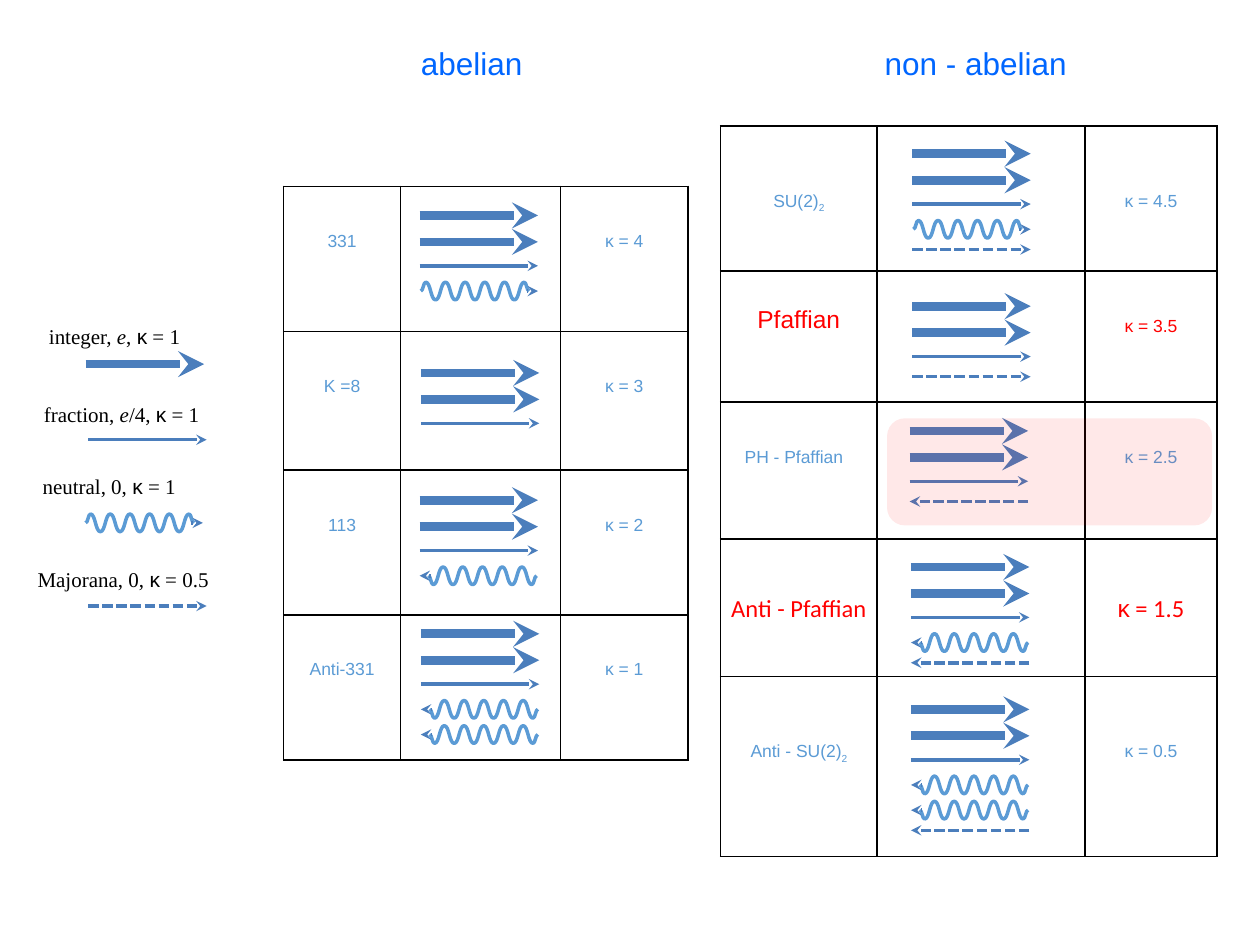
from dataclasses import dataclass

from lxml.etree import SubElement
from pptx import Presentation
from pptx.dml.color import RGBColor
from pptx.enum.dml import MSO_LINE
from pptx.enum.shapes import MSO_CONNECTOR, MSO_SHAPE
from pptx.enum.text import MSO_ANCHOR, MSO_AUTO_SIZE, PP_ALIGN
from pptx.oxml.ns import qn
from pptx.util import Inches, Pt


@dataclass(frozen=True)
class Theme:
    heading: str = "0066FF"
    label: str = "5B9BD5"
    arrow: str = "4B7EBC"
    accent: str = "FF0000"
    ink: str = "000000"
    sans: str = "Arial"
    serif: str = "Times New Roman"
    alt: str = "Calibri"
    heading_size: int = 18
    accent_size: int = 14
    legend_size: int = 12
    cell_size: int = 10


T = Theme()


def write(p, text, font=T.sans, size=T.cell_size, color=T.label, italic=False, base=0):
    r = p.add_run()
    r.text = text
    r.font.name = font
    r.font.size = Pt(size)
    r.font.bold = False
    r.font.italic = italic
    r.font.color.rgb = RGBColor.from_string(color)
    if base:
        r._r.get_or_add_rPr().set("baseline", str(base * 1000))


def add_arrow(shapes, x1, x2, y, width, dashed=False):
    c = shapes.add_connector(MSO_CONNECTOR.STRAIGHT, Inches(x1), Inches(y), Inches(x2), Inches(y))
    c.line.color.rgb = RGBColor.from_string(T.arrow)
    c.line.width = Pt(width)
    if dashed:
        c.line.dash_style = MSO_LINE.SQUARE_DOT
    SubElement(c.line._get_or_add_ln(), qn("a:tailEnd"), type="stealth")
    SubElement(c._element.spPr, qn("a:effectLst"))


prs = Presentation()
prs.slide_width = Inches(10)
prs.slide_height = Inches(7.5)
s = prs.slides.add_slide(prs.slide_layouts.get_by_name("Comparison"))

headings = {1: ("abelian", 3.24, 1.02), 3: ("non - abelian", 6.92, 1.66)}
for ph in list(s.placeholders):
    idx = ph.placeholder_format.idx
    if idx not in headings:
        ph._element.getparent().remove(ph._element)
        continue
    text, left, width = headings[idx]
    ph.left, ph.top, ph.width, ph.height = Inches(left), Inches(0.3), Inches(width), Inches(0.4)
    tf = ph.text_frame
    tf.word_wrap = False
    tf.auto_size = MSO_AUTO_SIZE.NONE
    tf.vertical_anchor = MSO_ANCHOR.TOP
    p = tf.paragraphs[0]
    p.space_before = Pt(0)
    write(p, text, size=T.heading_size, color=T.heading)

SUB = ("2", {"base": -25})
RED = {"color": T.accent}
BIG = {"color": T.accent, "size": T.accent_size}
BIG_ALT = {**BIG, "font": T.alt}
LINE2, LINE3 = 0.36, 0.52

tables = [
    (2.25, 1.48, [0.93, 1.27, 1.01], [
        (1.15, [("331", {})], LINE2, [("κ = 4", {})], LINE2),
        (1.1, [("K =8", {})], LINE2, [("κ = 3", {})], LINE2),
        (1.15, [("113", {})], LINE2, [("κ = 2", {})], LINE2),
        (1.15, [("Anti-331", {})], LINE2, [("κ = 1", {})], LINE2),
    ]),
    (5.72, 1, [1.24, 1.65, 1.05], [
        (1.15, [("SU(2)", {}), SUB], LINE3, [("κ = 4.5", {})], LINE3),
        (1.04, [("Pfaffian", BIG)], 0.28, [("κ = 3.5", RED)], LINE2),
        (1.09, [("PH - Pfaffian", {})], LINE2, [("κ = 2.5", {})], LINE2),
        (1.09, [("Anti - Pfaffian", BIG_ALT)], 0.44, [("κ", BIG), (" = 1.5", BIG_ALT)], 0.44),
        (1.43, [("Anti - SU(2)", {}), SUB], LINE3, [("κ = 0.5", {})], LINE3),
    ]),
]

for left, top, widths, rows in tables:
    height = sum(row[0] for row in rows)
    tbl = s.shapes.add_table(len(rows), len(widths), Inches(left), Inches(top),
                             Inches(sum(widths)), Inches(height)).table
    tbl.first_row = False
    tbl.horz_banding = False
    for col, width in zip(tbl.columns, widths):
        col.width = Inches(width)
    for i, (row_height, name, name_top, kappa, kappa_top) in enumerate(rows):
        tbl.rows[i].height = Inches(row_height)
        for j, (runs, margin) in enumerate([(name, name_top), ([], 0.04), (kappa, kappa_top)]):
            cell = tbl.cell(i, j)
            cell.margin_left = cell.margin_right = Inches(0.08)
            cell.margin_top, cell.margin_bottom = Inches(margin), Inches(0.04)
            for side in ("lnL", "lnR", "lnT", "lnB"):
                ln = SubElement(cell._tc.get_or_add_tcPr(), qn(f"a:{side}"), w=str(Pt(1)))
                SubElement(SubElement(ln, qn("a:solidFill")), qn("a:srgbClr"), val=T.ink)
            cell.fill.background()
            p = cell.text_frame.paragraphs[0]
            p.alignment = PP_ALIGN.CENTER
            for text, fmt in runs:
                write(p, text, **fmt)

ph_cell = tbl.cell(2, 0)
ph_cell.margin_left = Inches(0.19)
ph_cell.text_frame.paragraphs[0].alignment = PP_ALIGN.LEFT

LENGTH, WAVE_LENGTH, AMPLITUDE, EXTREMA = 0.94, 0.86, 0.07, 11
INTEGER, FRACTION, NEUTRAL, MAJORANA = "IFNM"
STEP = {INTEGER: 0.21, FRACTION: 0.19, NEUTRAL: 0.2, MAJORANA: 0.16}
rightward_upper_leftward_lower = [
    (3.33, 1.71, "IIFN"), (3.34, 2.96, "IIF"), (3.33, 3.97, "IIFn"), (3.34, 5.03, "IIFnn"),
    (7.24, 1.22, "IIFNM"), (7.24, 2.43, "IIFM"), (7.22, 3.42, "IIFm"),
    (7.23, 4.5, "IIFnm"), (7.23, 5.63, "IIFnnm"),
    (0.68, 2.89, "I"), (0.7, 3.49, "F"), (0.67, 4.15, "N"), (0.7, 4.81, "M"),
]
for left, y, kinds in rightward_upper_leftward_lower:
    shapes = s.shapes.add_group_shape().shapes if len(kinds) > 1 else s.shapes
    for i, kind in enumerate(kinds):
        mode = kind.upper()
        y += STEP[mode] if i else 0
        d = 1 if kind == mode else -1
        start, end = (left, left + LENGTH)[::d]
        if mode != NEUTRAL:
            add_arrow(shapes, start, end, y, 5 if mode == INTEGER else 2, mode == MAJORANA)
            continue
        steps = [(0, 0), *((k + 0.5, (-1) ** k) for k in range(EXTREMA)), (EXTREMA, 0)]
        points = [(Inches(start + d * (0.01 + WAVE_LENGTH * t / EXTREMA)),
                   Inches(y - d * AMPLITUDE * h)) for t, h in steps]
        fb = shapes.build_freeform(*points[0])
        fb.add_line_segments(points[1:], close=False)
        sp = fb.convert_to_shape()
        sp.shadow.inherit = False
        sp.fill.background()
        sp.line.color.rgb = RGBColor.from_string(T.label)
        sp.line.width = Pt(2)
        outline = sp._element.find(".//" + qn("a:path"))
        knots = [(int(pt.get("x")), int(pt.get("y"))) for pt in outline.iter(qn("a:pt"))]
        for segment in outline.findall(qn("a:lnTo")):
            outline.remove(segment)
        for (x1, y1), (x2, y2) in zip(knots, knots[1:]):
            mid = (x1 + x2) // 2
            curve = SubElement(outline, qn("a:cubicBezTo"))
            for px, py in ((mid, y1), (mid, y2), (x2, y2)):
                SubElement(curve, qn("a:pt"), x=str(px), y=str(py))
        add_arrow(shapes, end - d * 0.09, end, y, 2)

E = ("e", {"italic": True})
KAPPA = ("κ", {"font": T.sans})
legend = [
    (0.29, 2.52, 1.32, [("integer, ", {}), E, (", ", {}), KAPPA, (" = 1", {})]),
    (0.25, 3.14, 1.51, [("fraction, ", {}), E, ("/4, ", {}), KAPPA, (" = 1", {})]),
    (0.24, 3.71, 1.33, [("neutral, 0, ", {}), KAPPA, (" = 1", {})]),
    (0.2, 4.45, 1.64, [("Majorana, 0, ", {}), KAPPA, (" = 0.5", {})]),
]
for left, top, width, runs in legend:
    tf = s.shapes.add_textbox(Inches(left), Inches(top), Inches(width), Inches(0.31)).text_frame
    tf.word_wrap = True
    for text, fmt in runs:
        write(tf.paragraphs[0], text, **{"font": T.serif, "size": T.legend_size, "color": T.ink, **fmt})

sp = s.shapes.add_shape(MSO_SHAPE.ROUNDED_RECTANGLE, Inches(7.04), Inches(3.32), Inches(2.58), Inches(0.85))
sp.shadow.inherit = False
sp.line.fill.background()
sp.fill.solid()
sp.fill.fore_color.rgb = RGBColor.from_string(T.accent)
SubElement(sp._element.spPr.find(qn("a:solidFill")).find(qn("a:srgbClr")), qn("a:alpha"), val="9000")

prs.save("out.pptx")
